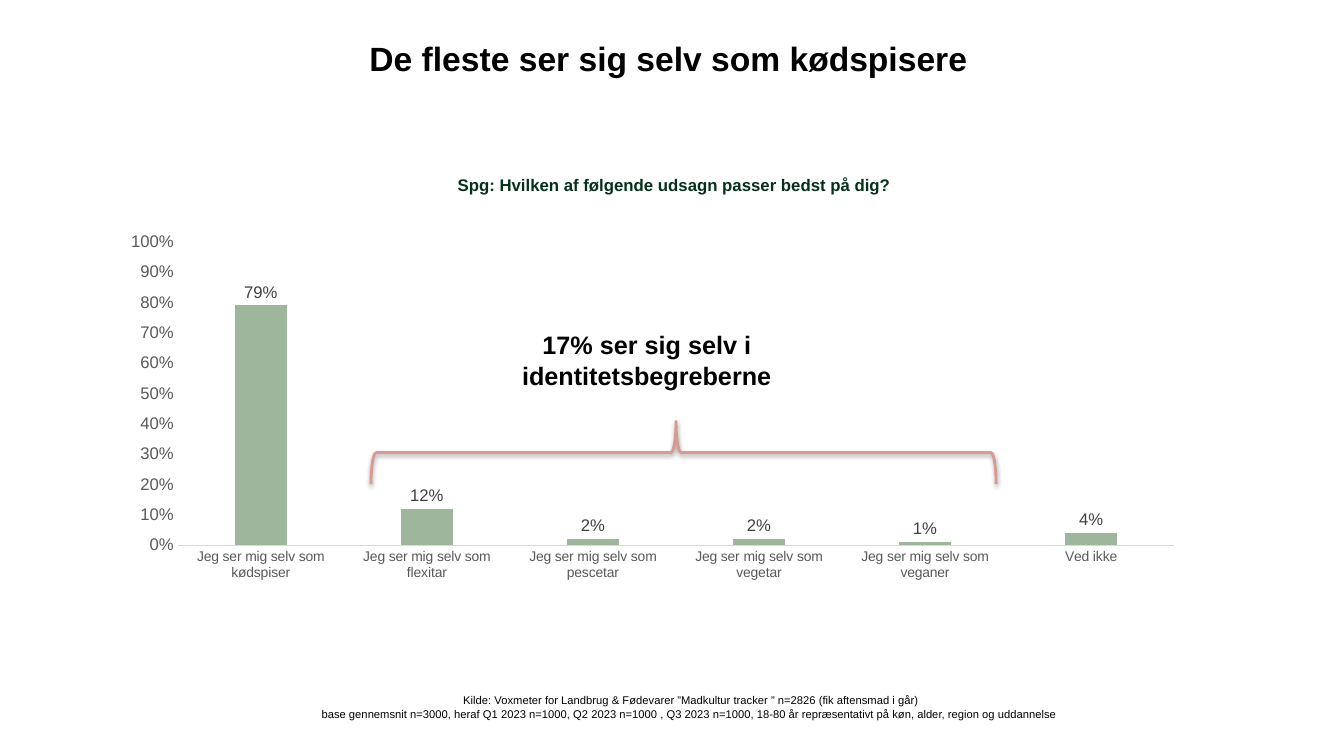
from lxml import etree
from pptx import Presentation
from pptx.chart.data import CategoryChartData
from pptx.dml.color import RGBColor
from pptx.enum.chart import XL_CHART_TYPE, XL_LABEL_POSITION, XL_TICK_MARK
from pptx.enum.shapes import MSO_SHAPE
from pptx.enum.text import MSO_ANCHOR, PP_ALIGN
from pptx.oxml import parse_xml
from pptx.oxml.ns import nsdecls, qn
from pptx.util import Inches, Pt

FONT = "Arial"
IDENTITIES = ["kødspiser", "flexitar", "pescetar", "vegetar", "veganer"]
SHARES = [0.79, 0.12, 0.02, 0.02, 0.01, 0.04]


def color(value):
    return RGBColor.from_string(value)


def set_font(font, size, value, bold=False):
    font.name = FONT
    font.size = Pt(size)
    font.bold = bold
    font.color.rgb = color(value)


def box(left, top, width, height):
    return [Inches(length) for length in (left, top, width, height)]


def write_centered(text_frame, lines, size, value="000000", bold=False):
    text_frame.word_wrap = True
    paragraph = text_frame.paragraphs[0]
    paragraph.alignment = PP_ALIGN.CENTER
    for index, line in enumerate(lines):
        if index:
            paragraph.add_line_break()
        run = paragraph.add_run()
        run.text = line
        set_font(run.font, size, value, bold)


def add_title(slide, text):
    title = slide.shapes.title
    title.left, title.top, title.width, title.height = box(1.48, 0.33, 10.39, 0.5)
    title.text_frame.vertical_anchor = MSO_ANCHOR.MIDDLE
    write_centered(title.text_frame, [text], 24, bold=True)


def add_text(slide, position, lines, size, value="000000", bold=False):
    text_frame = slide.shapes.add_textbox(*box(*position)).text_frame
    text_frame.margin_left = text_frame.margin_right = 0
    text_frame.margin_top = text_frame.margin_bottom = 0
    write_centered(text_frame, lines, size, value, bold)


def set_plot_layout(chart, x, y, width, height):
    plot_area = chart.plots[0]._element.getparent()
    for old_layout in plot_area.findall(qn("c:layout")):
        plot_area.remove(old_layout)
    layout = parse_xml(f"<c:layout {nsdecls('c')}><c:manualLayout/></c:layout>")
    settings = [("layoutTarget", "inner"), ("xMode", "edge"), ("yMode", "edge"),
                ("x", x), ("y", y), ("w", width), ("h", height)]
    for tag, value in settings:
        etree.SubElement(layout[0], qn(f"c:{tag}")).set("val", str(value))
    plot_area.insert(0, layout)


def format_axis(axis, size):
    axis.has_major_gridlines = False
    axis.major_tick_mark = axis.minor_tick_mark = XL_TICK_MARK.NONE
    set_font(axis.tick_labels.font, size, "595959")


def add_share_chart(slide):
    data = CategoryChartData(number_format="0%")
    data.categories = [f"Jeg ser mig selv som {name}" for name in IDENTITIES] + ["Ved ikke"]
    data.add_series("Andel", SHARES)
    chart = slide.shapes.add_chart(
        XL_CHART_TYPE.COLUMN_CLUSTERED, *box(1.3, 2.25, 10.46, 4.48), data).chart
    chart.has_title = chart.has_legend = False
    set_font(chart.font, 10, "000000")
    set_plot_layout(chart, 0.037, 0.033, 0.952, 0.672)

    # Axes
    format_axis(chart.category_axis, 10)
    chart.category_axis.format.line.color.rgb = color("D9D9D9")
    chart.category_axis.format.line.width = Pt(0.75)
    value_axis = chart.value_axis
    format_axis(value_axis, 12)
    value_axis.format.line.fill.background()
    value_axis.minimum_scale, value_axis.maximum_scale = 0, 1
    value_axis.major_unit = 0.1
    value_axis.tick_labels.number_format = "0%"
    value_axis.tick_labels.number_format_is_linked = False

    # Columns and their labels
    plot = chart.plots[0]
    plot.vary_by_categories = False
    plot.gap_width, plot.overlap = 219, -27
    fill = plot.series[0].format.fill
    fill.solid()
    fill.fore_color.rgb = color("9EB79C")
    labels = plot.series[0].data_labels
    labels.show_value = True
    labels.number_format = "0%"
    labels.number_format_is_linked = False
    labels.position = XL_LABEL_POSITION.OUTSIDE_END
    set_font(labels.font, 12, "404040")


def add_brace(slide):
    brace = slide.shapes.add_shape(MSO_SHAPE.RIGHT_BRACE, *box(6.47, 1.39, 0.62, 6.2))
    brace.rotation = 270
    brace.adjustments[0], brace.adjustments[1] = 0.083, 0.488
    brace.fill.background()
    brace.line.color.rgb = color("D79B93")
    brace.line.width = Pt(2)
    # Soft shadow straight below
    brace._element.spPr.append(parse_xml(
        f"<a:effectLst {nsdecls('a')}>"
        f'<a:outerShdw blurRad="{Pt(3.1)}" dist="{Pt(1.6)}" dir="5400000" rotWithShape="0">'
        '<a:srgbClr val="000000"><a:alpha val="38000"/></a:srgbClr>'
        "</a:outerShdw></a:effectLst>"))


def main():
    presentation = Presentation()
    presentation.slide_width, presentation.slide_height = Inches(13.33), Inches(7.5)
    slide = presentation.slides.add_slide(presentation.slide_layouts[5])

    # Chart with title and question
    add_share_chart(slide)
    add_title(slide, "De fleste ser sig selv som kødspisere ")
    add_text(slide, (1.3, 1.73, 10.82, 0.2),
             ["Spg: Hvilken af følgende udsagn passer bedst på dig? "], 12, "053119", True)

    # Bracketed group
    add_brace(slide)
    add_text(slide, (4.9, 3.27, 3.03, 0.61),
             ["17% ser sig selv i identitetsbegreberne"], 18, bold=True)

    # Source
    add_text(slide, (2.8, 6.88, 8.11, 0.27), [
        "Kilde: Voxmeter for Landbrug & Fødevarer ”Madkultur tracker ” n=2826 (fik aftensmad i går)",
        "base gennemsnit n=3000, heraf Q1 2023 n=1000, Q2 2023 n=1000 , Q3 2023 n=1000, "
        "18-80 år repræsentativt på køn, alder, region og uddannelse "], 8)
    presentation.save("out.pptx")


if __name__ == "__main__":
    main()
